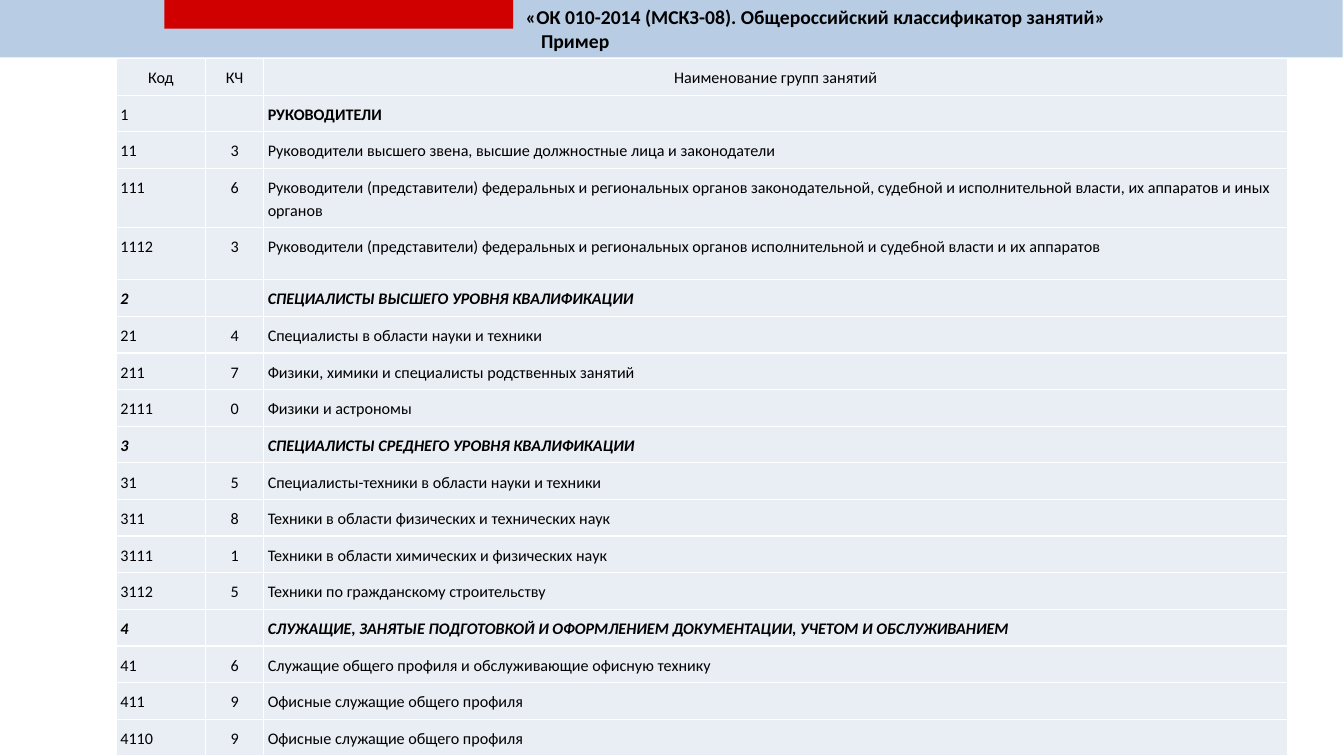
from lxml.etree import SubElement
from pptx import Presentation
from pptx.dml.color import RGBColor
from pptx.enum.shapes import MSO_SHAPE
from pptx.enum.text import MSO_ANCHOR, PP_ALIGN
from pptx.oxml.ns import qn
from pptx.util import Pt

COLORS = {"band": "4F81BD", "accent": "D00000", "cell": "E9EDF4",
          "border": "FFFFFF", "text": "000000"}

TITLE = ["«ОК 010-2014 (МСКЗ-08). Общероссийский классификатор занятий»", "Пример"]

HEADER = ("Код", "КЧ", "Наименование групп занятий")
GROUPS = [
    ("1", "", "РУКОВОДИТЕЛИ"),
    ("11", "3", "Руководители высшего звена, высшие должностные лица и законодатели"),
    ("111", "6", "Руководители (представители) федеральных и региональных органов "
                 "законодательной, судебной и исполнительной власти, их аппаратов и иных органов"),
    ("1112", "3", "Руководители (представители) федеральных и региональных органов "
                  "исполнительной и судебной власти и их аппаратов"),
    ("2", "", "СПЕЦИАЛИСТЫ ВЫСШЕГО УРОВНЯ КВАЛИФИКАЦИИ"),
    ("21", "4", "Специалисты в области науки и техники"),
    ("211", "7", "Физики, химики и специалисты родственных занятий"),
    ("2111", "0", "Физики и астрономы"),
    ("3", "", "СПЕЦИАЛИСТЫ СРЕДНЕГО УРОВНЯ КВАЛИФИКАЦИИ"),
    ("31", "5", "Специалисты-техники в области науки и техники"),
    ("311", "8", "Техники в области физических и технических наук"),
    ("3111", "1", "Техники в области химических и физических наук"),
    ("3112", "5", "Техники по гражданскому строительству"),
    ("4", "", "СЛУЖАЩИЕ, ЗАНЯТЫЕ ПОДГОТОВКОЙ И ОФОРМЛЕНИЕМ ДОКУМЕНТАЦИИ, "
              "УЧЕТОМ И ОБСЛУЖИВАНИЕМ"),
    ("41", "6", "Служащие общего профиля и обслуживающие офисную технику"),
    ("411", "9", "Офисные служащие общего профиля"),
    ("4110", "9", "Офисные служащие общего профиля"),
]
COLUMN_WIDTHS = (63.9, 41.4, 731.5)
ROW_HEIGHT = 26.18
TALL_ROWS = {"111": 42, "1112": 37.2}


class SlideBuilder:
    font = "Calibri"
    title_size = 14
    table_size = 11.5

    def __init__(self, slide):
        self.slide = slide

    def format_runs(self, paragraph, size, bold=False, italic=False):
        for run in paragraph.runs:
            run.font.name = self.font
            run.font.size = Pt(size)
            run.font.bold = bold
            run.font.italic = italic
            run.font.color.rgb = RGBColor.from_string(COLORS["text"])

    def bar(self, left, top, width, height, color, opacity=100):
        bar = self.slide.shapes.add_shape(
            MSO_SHAPE.RECTANGLE, Pt(left), Pt(top), Pt(width), Pt(height))
        bar.shadow.inherit = False
        bar.line.fill.background()
        bar.fill.solid()
        bar.fill.fore_color.rgb = RGBColor.from_string(COLORS[color])
        if opacity < 100:
            rgb = bar.fill._xPr.find(".//" + qn("a:srgbClr"))
            SubElement(rgb, qn("a:alpha"), val=str(opacity * 1000))
        return bar

    def title(self, bar, lines, left, second_indent):
        frame = bar.text_frame
        frame.word_wrap = True
        frame.vertical_anchor = MSO_ANCHOR.MIDDLE
        frame.margin_left = Pt(left)
        frame.margin_top = frame.margin_bottom = Pt(3.6)
        frame.text = "\n".join(lines)
        for paragraph in frame.paragraphs:
            paragraph.alignment = PP_ALIGN.LEFT
            self.format_runs(paragraph, self.title_size, bold=True)
        frame.paragraphs[1]._p.get_or_add_pPr().set("marL", str(Pt(second_indent)))

    def cell(self, cell, text, centered, bold, italic):
        cell.margin_left = cell.margin_right = Pt(3)
        cell.margin_top = cell.margin_bottom = Pt(5)
        cell.fill.solid()
        cell.fill.fore_color.rgb = RGBColor.from_string(COLORS["cell"])
        self.borders(cell)
        paragraph = cell.text_frame.paragraphs[0]
        paragraph.text = text
        paragraph.alignment = PP_ALIGN.CENTER if centered else PP_ALIGN.LEFT
        paragraph.line_spacing = 1.15
        self.format_runs(paragraph, self.table_size, bold, italic)
        if not text:  # keeps an empty cell from stretching its row
            SubElement(paragraph._p, qn("a:endParaRPr"), sz=str(int(self.table_size * 100)))

    def borders(self, cell):
        properties = cell._tc.get_or_add_tcPr()
        for position, side in enumerate(("lnL", "lnR", "lnT", "lnB")):
            line = SubElement(properties, qn("a:" + side), w=str(Pt(1)))
            fill = SubElement(line, qn("a:solidFill"))
            SubElement(fill, qn("a:srgbClr"), val=COLORS["border"])
            properties.insert(position, line)

    def classifier(self, left, top, header, groups):
        rows = [header, *groups]
        heights = [TALL_ROWS.get(code, ROW_HEIGHT) for code, _, _ in rows]
        table = self.slide.shapes.add_table(
            len(rows), len(header), Pt(left), Pt(top),
            Pt(sum(COLUMN_WIDTHS)), Pt(sum(heights))).table
        table.first_row = table.horz_banding = False
        for column, width in zip(table.columns, COLUMN_WIDTHS):
            column.width = Pt(width)
        for r, (entry, height) in enumerate(zip(rows, heights)):
            table.rows[r].height = Pt(height)
            code, check_digit, _ = entry
            section = not check_digit
            first_section = code == "1"
            for c, text in enumerate(entry):
                self.cell(table.cell(r, c), text,
                          centered=r == 0 or c == 1,
                          bold=section and not (first_section and c == 0),
                          italic=section and not first_section)


def main():
    presentation = Presentation()
    presentation.slide_width, presentation.slide_height = Pt(960), Pt(540)
    builder = SlideBuilder(presentation.slides.add_slide(presentation.slide_layouts[6]))

    # Title band
    title_band = builder.bar(0, 0, 959, 41, "band", opacity=40)
    builder.title(title_band, TITLE, left=375.5, second_indent=11)

    # Table of occupation groups
    builder.classifier(83, 41.8, HEADER, GROUPS)

    # Red accent
    builder.bar(117.4, 0, 249.1, 20.5, "accent")

    presentation.save("out.pptx")


if __name__ == "__main__":
    main()
